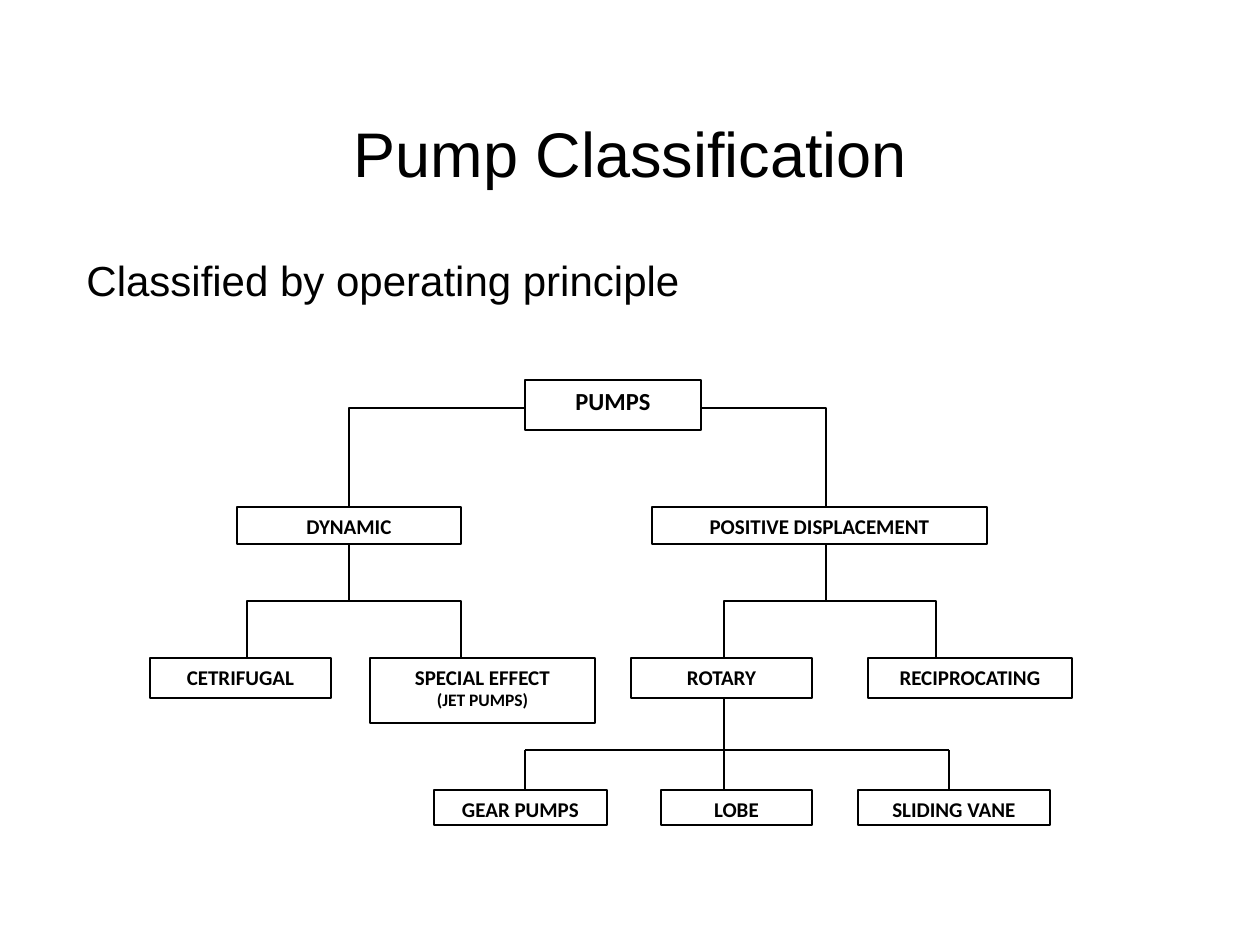
from lxml import etree
from pptx import Presentation
from pptx.dml.color import RGBColor
from pptx.enum.shapes import MSO_CONNECTOR, MSO_SHAPE
from pptx.enum.text import MSO_ANCHOR, MSO_AUTO_SIZE, PP_ALIGN
from pptx.oxml.ns import qn
from pptx.util import Pt

RECTANGLE = MSO_SHAPE.RECTANGLE
STRAIGHT, ELBOW = MSO_CONNECTOR.STRAIGHT, MSO_CONNECTOR.ELBOW
TOP, MIDDLE = MSO_ANCHOR.TOP, MSO_ANCHOR.MIDDLE
FIT_SHAPE = MSO_AUTO_SIZE.SHAPE_TO_FIT_TEXT
LEFT, CENTER = PP_ALIGN.LEFT, PP_ALIGN.CENTER
EMU_PER_PX = 914400 / 126
BLACK, WHITE = "000000", "FFFFFF"


def px(*lengths):
    return [round(length * EMU_PER_PX) for length in lengths]


def color(target, value):
    target.rgb = RGBColor.from_string(value)


deck = Presentation()
deck.slide_width, deck.slide_height = px(1260, 945)
slide = deck.slides.add_slide(deck.slide_layouts[6])

headings = [
    ("Pump Classification", (79, 108, 1103, 89), 36, CENTER, 1.0),
    ("Classified by operating principle", (74, 254, 1113, 58), 24, LEFT, 0.9),
]
for wording, place, size, alignment, spacing in headings:
    frame = slide.shapes.add_textbox(*px(*place)).text_frame
    frame.word_wrap = True
    frame.auto_size = FIT_SHAPE
    frame.vertical_anchor = MIDDLE
    paragraph = frame.paragraphs[0]
    paragraph.text = wording
    paragraph.alignment = alignment
    paragraph.line_spacing = spacing
    paragraph.font.name = "Arial"
    paragraph.font.size = Pt(size)
    color(paragraph.font.color, BLACK)

pump_types = [
    (["PUMPS"], 525, 380, 176, 50, 14),
    (["DYNAMIC"], 237, 507, 224, 37, 12),
    (["POSITIVE DISPLACEMENT"], 652, 507, 335, 37, 12),
    (["CETRIFUGAL"], 150, 658, 181, 40, 12),
    (["SPECIAL EFFECT", "(JET PUMPS)"], 370, 658, 225, 65, 12),
    (["ROTARY"], 631, 658, 181, 40, 12),
    (["RECIPROCATING"], 868, 658, 204, 40, 12),
    (["GEAR PUMPS"], 434, 790, 173, 35, 12),
    (["LOBE"], 661, 790, 151, 35, 12),
    (["SLIDING VANE"], 858, 790, 192, 35, 12),
]
for lines, left, top, width, height, size in pump_types:
    box = slide.shapes.add_shape(RECTANGLE, *px(left, top, width, height))
    box.shadow.inherit = False
    box.fill.solid()
    color(box.fill.fore_color, WHITE)
    color(box.line.color, BLACK)
    box.line.width = Pt(0.75)
    frame = box.text_frame
    frame.word_wrap = True
    frame.vertical_anchor = TOP
    for index, line in enumerate(lines):
        paragraph = frame.paragraphs[0] if index == 0 else frame.add_paragraph()
        paragraph.text = line
        paragraph.alignment = CENTER
        paragraph.space_after = Pt(10 if line == lines[-1] else 0)
        paragraph.font.name = "Calibri"
        paragraph.font.size = Pt(size if index == 0 else 10)
        paragraph.font.bold = True
        color(paragraph.font.color, BLACK)

branches = []
for pumps_side, child_x in [(525, 349), (701, 826)]:
    branch = slide.shapes.add_connector(ELBOW, *px(pumps_side, 408, child_x, 507))
    branch._element.spPr.find(qn("a:prstGeom")).set("prst", "bentConnector2")
    branches.append(branch)

for parent_x, child_x in [(826, 724), (826, 936), (349, 247), (349, 461)]:
    middle_x, middle_y = (parent_x + child_x) / 2, (544 + 658) / 2
    half_drop, half_shift = (658 - 544) / 2, abs(child_x - parent_x) / 2
    direction = 1 if child_x < parent_x else -1
    branch = slide.shapes.add_connector(ELBOW, *px(
        middle_x - direction * half_drop, middle_y - half_shift,
        middle_x + direction * half_drop, middle_y + half_shift))
    quarter_turns = 1 if child_x < parent_x else 3
    branch._element.spPr.find(qn("a:xfrm")).set("rot", str(quarter_turns * 5400000))
    branches.append(branch)

rotary_lines = [
    (724, 698, 724, 790),
    (525, 750, 949, 750),
    (525, 750, 525, 790),
    (949, 750, 949, 790),
]
for ends in rotary_lines:
    branches.append(slide.shapes.add_connector(STRAIGHT, *px(*ends)))

for branch in branches:
    color(branch.line.color, BLACK)
    branch.line.width = Pt(0.75)
    etree.SubElement(branch._element.spPr, qn("a:effectLst"))

deck.save("out.pptx")
